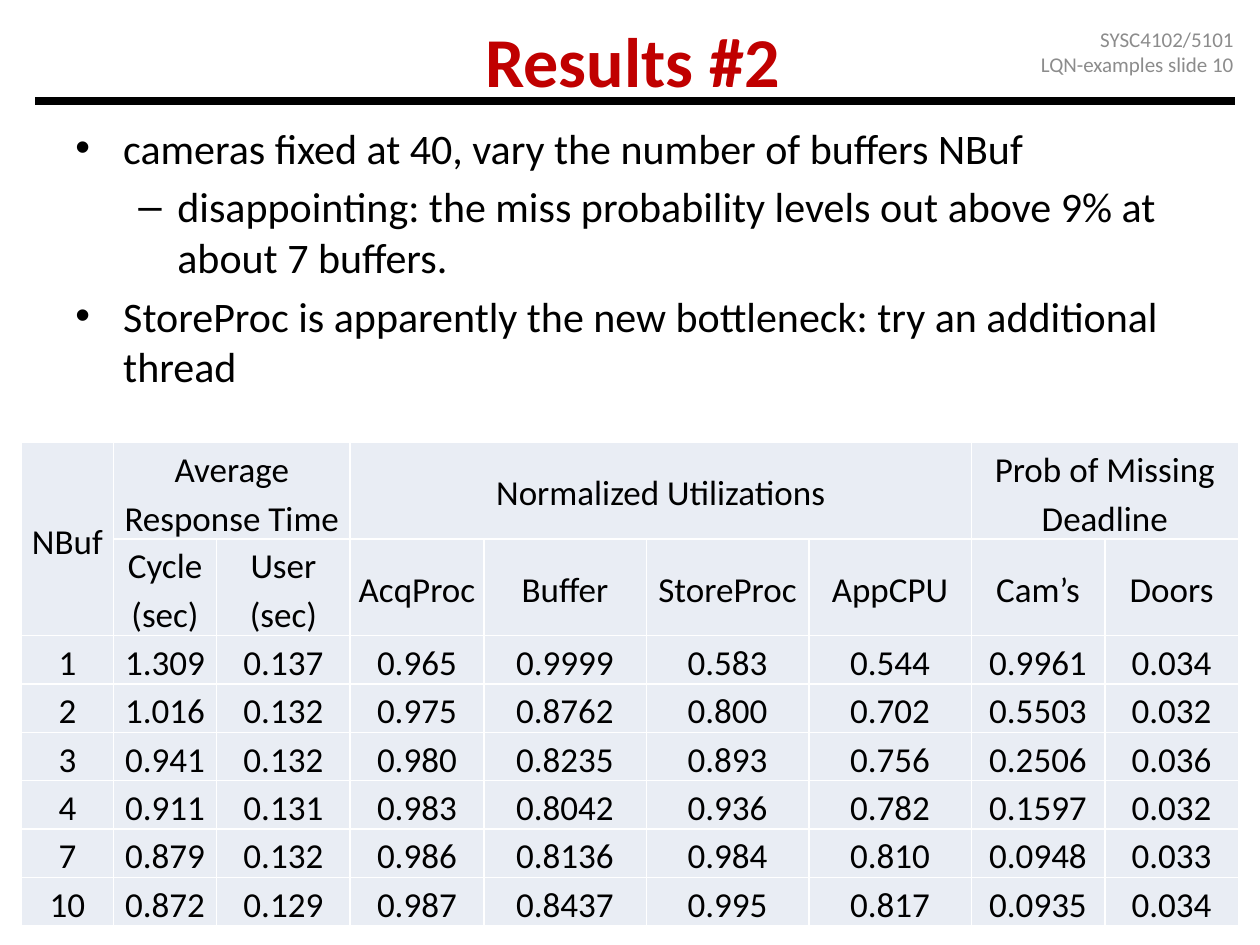
import lxml.etree
import pptx
import pptx.dml.color
import pptx.enum.shapes
import pptx.enum.text
import pptx.oxml.ns
import pptx.util

Inches = pptx.util.Inches
Pt = pptx.util.Pt
Align = pptx.enum.text.PP_ALIGN
Anchor = pptx.enum.text.MSO_ANCHOR
qn = pptx.oxml.ns.qn

COLORS = {
    "text": "000000",
    "title": "C00000",
    "header": "8C8C8C",
    "cell": "E9EDF4",
    "border": "FFFFFF",
}

BULLETS = [
    (0, "cameras fixed at 40, vary the number of buffers NBuf"),
    (1, "disappointing: the miss probability levels out above 9% at about 7 buffers."),
    (0, "StoreProc is apparently the new bottleneck: try an additional thread"),
]
BULLET_STYLES = [("•", 0.38, 0.38), ("–", 0.81, 0.31)]

COLUMN_WIDTHS = [0.73, 0.82, 1.06, 1.06, 1.29, 1.29, 1.29, 1.06, 1.06]
ROW_HEIGHTS = [0.75] * 2 + [0.36] * 6
MERGES = [(0, 0, 1, 0), (0, 1, 0, 2), (0, 3, 0, 6), (0, 7, 0, 8)]
RESULTS = [
    ["NBuf", "Average Response Time", "", "Normalized Utilizations", "", "", "",
     "Prob of Missing Deadline", ""],
    ["", "Cycle (sec)", "User (sec)", "AcqProc", "Buffer", "StoreProc", "AppCPU",
     "Cam’s", "Doors"],
    ["1", "1.309", "0.137", "0.965", "0.9999", "0.583", "0.544", "0.9961", "0.034"],
    ["2", "1.016", "0.132", "0.975", "0.8762", "0.800", "0.702", "0.5503", "0.032"],
    ["3", "0.941", "0.132", "0.980", "0.8235", "0.893", "0.756", "0.2506", "0.036"],
    ["4", "0.911", "0.131", "0.983", "0.8042", "0.936", "0.782", "0.1597", "0.032"],
    ["7", "0.879", "0.132", "0.986", "0.8136", "0.984", "0.810", "0.0948", "0.033"],
    ["10", "0.872", "0.129", "0.987", "0.8437", "0.995", "0.817", "0.0935", "0.034"],
]


class SlideBuilder:
    def __init__(self, page, font_name="Calibri"):
        self.page = page
        self.font_name = font_name

    def color(self, name):
        return pptx.dml.color.RGBColor.from_string(COLORS[name])

    def style(self, para, size, color, align=Align.LEFT, bold=False):
        para.alignment = align
        para.font.name = self.font_name
        para.font.size = Pt(size)
        para.font.bold = bold
        para.font.color.rgb = self.color(color)

    def rule(self, start, end, width):
        line = self.page.shapes.add_connector(
            pptx.enum.shapes.MSO_CONNECTOR.STRAIGHT,
            *(Inches(value) for value in start + end))
        line.line.color.rgb = self.color("text")
        line.line.width = Pt(width)
        lxml.etree.SubElement(line._element.spPr, qn("a:effectLst"))

    def text_frame(self, area, anchor):
        box = self.page.shapes.add_textbox(*(Inches(value) for value in area))
        box.text_frame.word_wrap = True
        box.text_frame.vertical_anchor = anchor
        return box.text_frame

    def text(self, area, lines, size, color, align, bold=False):
        frame = self.text_frame(area, Anchor.MIDDLE)
        frame.text = "\n".join(lines)
        for para in frame.paragraphs:
            self.style(para, size, color, align, bold)

    def bullets(self, area, items, size):
        frame = self.text_frame(area, Anchor.TOP)
        frame.text = "\n".join(text for level, text in items)
        for index, (para, (level, text)) in enumerate(zip(frame.paragraphs, items)):
            symbol, margin, hanging = BULLET_STYLES[level]
            para.level = level
            if index:
                para.space_before = Pt(0.2 * size)
            properties = para._p.get_or_add_pPr()
            properties.set("marL", str(Inches(margin)))
            properties.set("indent", str(-Inches(hanging)))
            lxml.etree.SubElement(properties, qn("a:buFont"), typeface="Arial")
            lxml.etree.SubElement(properties, qn("a:buChar"), char=symbol)
            self.style(para, size, "text")

    def cell(self, cell, text, size):
        cell.text = text
        cell.vertical_anchor = Anchor.MIDDLE
        cell.margin_left = cell.margin_right = cell.margin_top = cell.margin_bottom = 0
        for side in ("a:lnL", "a:lnR", "a:lnT", "a:lnB"):
            border = lxml.etree.SubElement(
                cell._tc.get_or_add_tcPr(), qn(side), w=str(Pt(1)))
            fill = lxml.etree.SubElement(border, qn("a:solidFill"))
            lxml.etree.SubElement(fill, qn("a:srgbClr"), val=COLORS["border"])
        cell.fill.solid()
        cell.fill.fore_color.rgb = self.color("cell")
        para = cell.text_frame.paragraphs[0]
        para.line_spacing = 1.15
        self.style(para, size, "text", Align.CENTER)

    def table(self, left, top, widths, heights, rows, merges, size):
        table = self.page.shapes.add_table(
            len(heights), len(widths), Inches(left), Inches(top),
            Inches(sum(widths)), Inches(sum(heights))).table
        table.first_row = table.horz_banding = False
        for column, width in zip(table.columns, widths):
            column.width = Inches(width)
        for row, height, texts in zip(table.rows, heights, rows):
            row.height = Inches(height)
            for cell, text in zip(row.cells, texts):
                self.cell(cell, text, size)
        for top_row, left_column, bottom_row, right_column in merges:
            table.cell(top_row, left_column).merge(table.cell(bottom_row, right_column))


def main():
    deck = pptx.Presentation()
    deck.slide_width = Inches(10)
    deck.slide_height = Inches(7.5)
    builder = SlideBuilder(deck.slides.add_slide(deck.slide_layouts[6]))

    builder.rule((0.28, 0.8), (9.8, 0.8), 4.5)
    builder.bullets((0.5, 0.92, 9, 2.31), BULLETS, 24)
    builder.text((7.56, 0.21, 2.33, 0.4), ["SYSC4102/5101", "LQN-examples slide 10"],
                 12, "header", Align.RIGHT)
    builder.text((1.26, 0.17, 7.52, 0.61), ["Results #2"], 40, "title", Align.CENTER, True)
    builder.table(0.17, 3.51, COLUMN_WIDTHS, ROW_HEIGHTS, RESULTS, MERGES, 20)

    deck.save("out.pptx")


if __name__ == "__main__":
    main()
